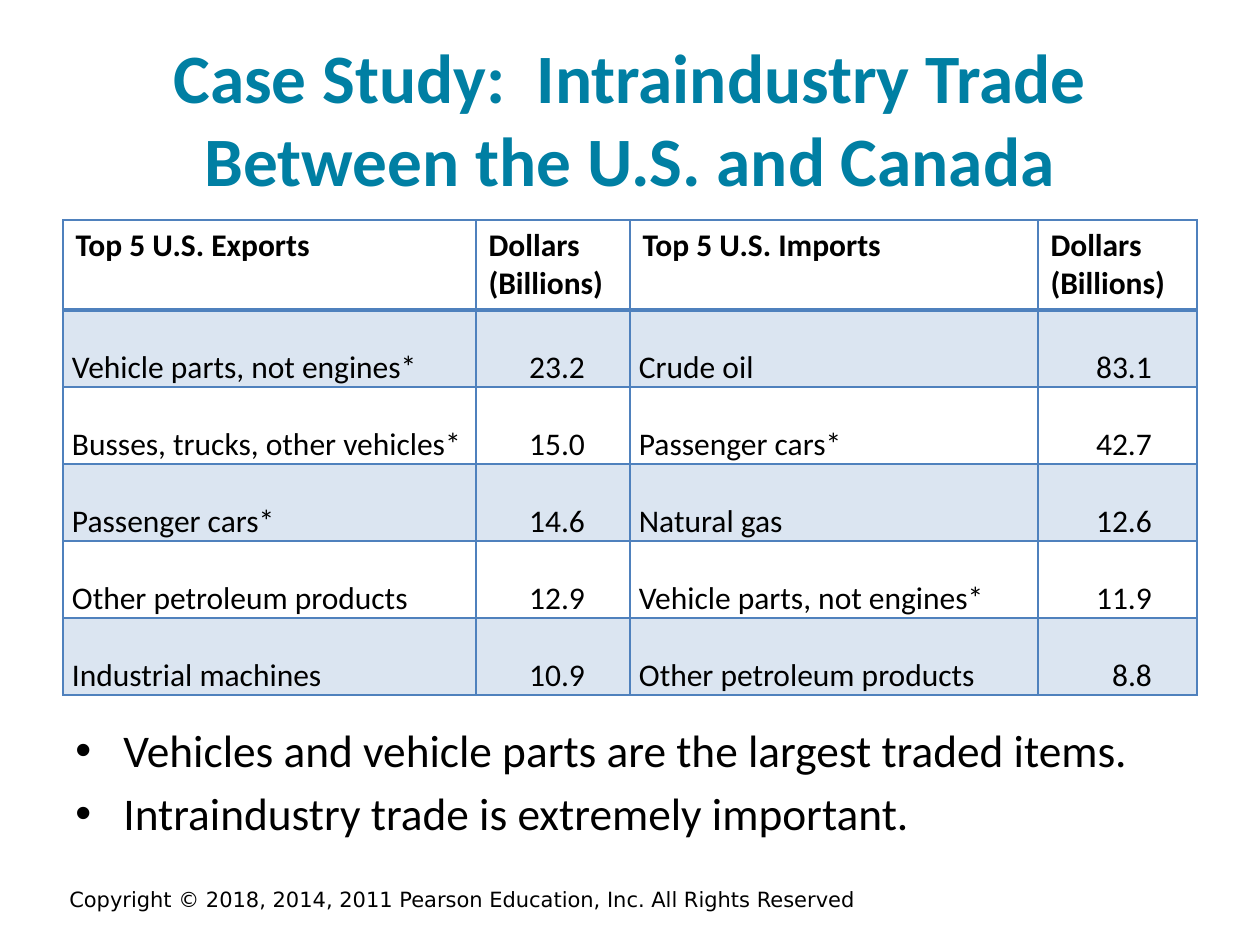
from dataclasses import dataclass

from lxml import etree
from pptx import Presentation
from pptx.dml.color import RGBColor as RGB
from pptx.enum.text import MSO_ANCHOR as ANCHOR, MSO_AUTO_SIZE as AUTO, PP_ALIGN as ALIGN
from pptx.oxml.ns import qn
from pptx.util import Emu, Pt

PX = 914400 / 126


@dataclass(frozen=True)
class Theme:
    font: str = "Calibri"
    footer_font: str = "DejaVu Sans"
    title_color: str = "007FA3"
    text_color: str = "000000"
    accent: str = "4F81BD"
    band_alpha: int = 20
    title_size: float = 39.6
    body_size: float = 25.9
    table_size: float = 18
    footer_size: float = 12


def px(n):
    return Emu(round(n * PX))


def assign(obj, **values):
    for name, value in values.items():
        setattr(obj, name, value)


def add_child(parent, tag, **attrs):
    return etree.SubElement(parent, qn(tag), {k: str(v) for k, v in attrs.items()})


class Deck:
    def __init__(self, theme, width, height):
        self.theme = theme
        self.prs = Presentation()
        assign(self.prs, slide_width=px(width), slide_height=px(height))
        self.s = self.prs.slides.add_slide(self.prs.slide_layouts[5])

    def add_text(self, p, text, size, color=None, **font):
        r = p.add_run()
        r.text = text
        assign(r.font, **{"name": self.theme.font, "size": Pt(size), **font})
        r.font.color.rgb = RGB.from_string(color or self.theme.text_color)

    def place(self, sp, box, anchor):
        assign(sp, **dict(zip(("left", "top", "width", "height"), map(px, box))))
        assign(sp.text_frame, word_wrap=True, auto_size=AUTO.NONE, vertical_anchor=anchor)
        return sp.text_frame

    def text_box(self, box, anchor):
        sp = self.s.shapes.add_textbox(*map(px, box))
        return self.place(sp, box, anchor)

    def title(self, text, box):
        p = self.place(self.s.shapes.title, box, ANCHOR.MIDDLE).paragraphs[0]
        p.alignment = ALIGN.CENTER
        self.add_text(p, text, self.theme.title_size, self.theme.title_color, bold=True)

    def footer(self, text, box):
        p = self.text_box(box, ANCHOR.MIDDLE).paragraphs[0]
        p.alignment = ALIGN.CENTER
        self.add_text(p, text, self.theme.footer_size, name=self.theme.footer_font)

    def bullets(self, items, box, indent):
        tf = self.text_box(box, ANCHOR.TOP)
        for i, item in enumerate(items):
            p = tf.add_paragraph() if i else tf.paragraphs[0]
            pPr = p._p.get_or_add_pPr()
            pPr.set("marL", str(px(indent)))
            pPr.set("indent", str(px(-indent)))
            add_child(pPr, "a:buFont", typeface="Arial")
            add_child(pPr, "a:buChar", char="•")
            if i:
                p.space_before = Pt(5)
            self.add_text(p, item, self.theme.body_size)

    def borders(self, cell, top, bottom):
        tcPr = cell._tc.get_or_add_tcPr()
        for side, width in zip("LRTB", (1, 1, top, bottom)):
            ln = add_child(tcPr, f"a:ln{side}", w=Pt(width))
            add_child(add_child(ln, "a:solidFill"), "a:srgbClr", val=self.theme.accent)

    def band(self, cell):
        cell.fill.solid()
        cell.fill.fore_color.rgb = RGB.from_string(self.theme.accent)
        color = cell._tc.tcPr.find(qn("a:solidFill")).find(qn("a:srgbClr"))
        add_child(color, "a:alpha", val=self.theme.band_alpha * 1000)

    def table(self, rows, left, top, col_widths, row_heights):
        frame = self.s.shapes.add_table(len(rows), len(col_widths), px(left), px(top),
                                        px(sum(col_widths)), px(sum(row_heights)))
        table = frame.table
        assign(table, first_row=False, horz_banding=False)
        for col, width in zip(table.columns, col_widths):
            col.width = px(width)
        for row, height in zip(table.rows, row_heights):
            row.height = px(height)
        for i, values in enumerate(rows):
            for j, value in enumerate(values):
                cell = table.cell(i, j)
                self.borders(cell, 2 if i == 1 else 1, 2 if i == 0 else 1)
                if i % 2:
                    self.band(cell)
                else:
                    cell.fill.background()
                p = cell.text_frame.paragraphs[0]
                if i:
                    self.body_cell(cell, p, is_number=j % 2 == 1)
                self.add_text(p, value, self.theme.table_size, bold=i == 0)

    def body_cell(self, cell, p, is_number):
        assign(cell, margin_left=px(9), margin_right=px(45 if is_number else 9),
               margin_top=0, margin_bottom=0)
        p.line_spacing = 2.0
        if is_number:
            cell.vertical_anchor = ANCHOR.BOTTOM
            p.alignment = ALIGN.RIGHT


TRADE = [
    ("Top 5 U.S. Exports", "Dollars (Billions)", "Top 5 U.S. Imports", "Dollars (Billions)"),
    ("Vehicle parts, not engines*", "23.2", "Crude oil", "83.1"),
    ("Busses, trucks, other vehicles*", "15.0", "Passenger cars*", "42.7"),
    ("Passenger cars*", "14.6", "Natural gas", "12.6"),
    ("Other petroleum products", "12.9", "Vehicle parts, not engines*", "11.9"),
    ("Industrial machines", "10.9", "Other petroleum products", "8.8"),
]


def main():
    deck = Deck(Theme(), 1260, 945)
    deck.footer("Copyright © 2018, 2014, 2011 Pearson Education, Inc. All Rights Reserved",
                (-15, 877, 955, 45))
    deck.title("Case Study:  Intraindustry Trade Between the U.S. and Canada",
               (63, 38, 1134, 158))
    deck.table(TRADE, 63, 220, (413, 154, 408, 159), [90] + [77] * 5)
    deck.bullets(["Vehicles and vehicle parts are the largest traded items.",
                  "Intraindustry trade is extremely important."],
                 (63, 716, 1134, 128), 48)
    deck.prs.save("out.pptx")


if __name__ == "__main__":
    main()
